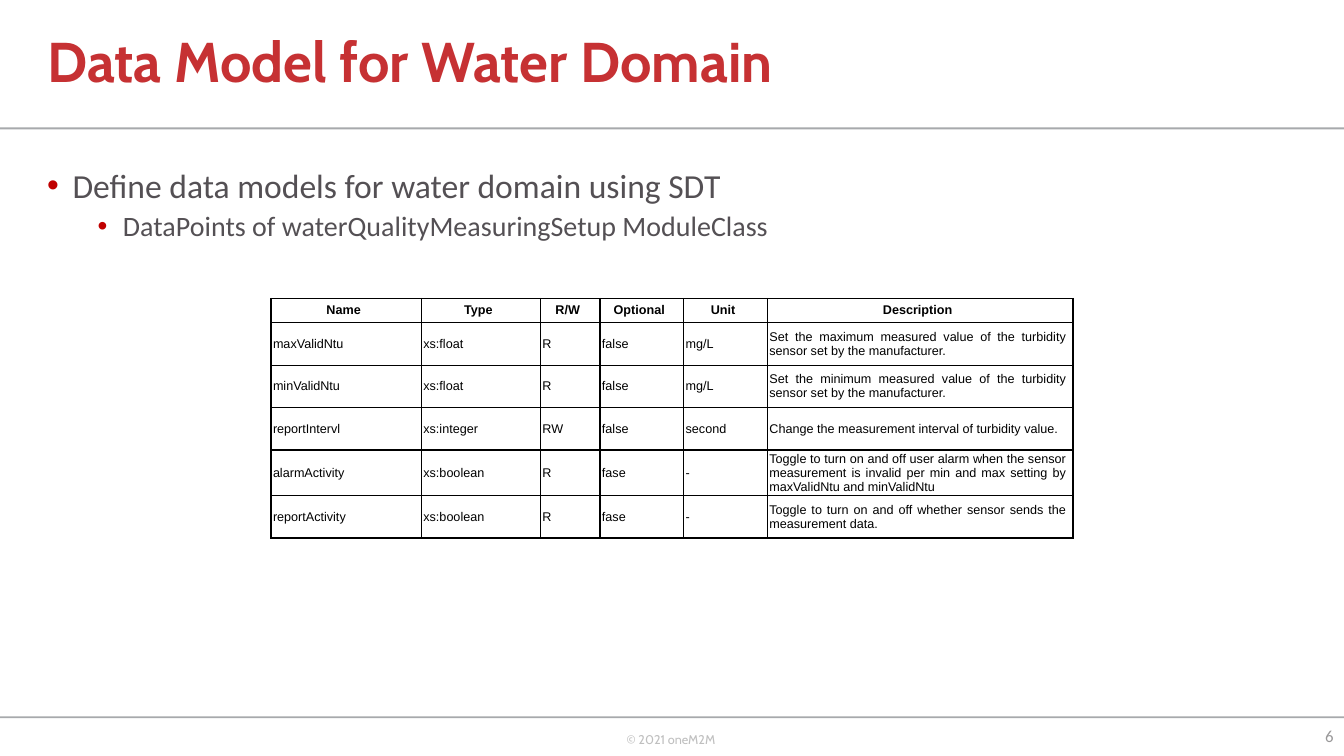
from lxml.etree import SubElement
from pptx import Presentation
from pptx.dml.color import RGBColor
from pptx.enum.shapes import MSO_SHAPE
from pptx.enum.text import MSO_ANCHOR, MSO_AUTO_SIZE, PP_ALIGN
from pptx.oxml.ns import qn
from pptx.util import Cm, Pt

HEADERS = ["Name", "Type", "R/W", "Optional", "Unit", "Description"]
DATA_POINTS = [
    ["maxValidNtu", "xs:float", "R", "false", "mg/L",
     "Set the maximum measured value of the turbidity sensor set by the manufacturer."],
    ["minValidNtu", "xs:float", "R", "false", "mg/L",
     "Set the minimum measured value of the turbidity sensor set by the manufacturer."],
    ["reportIntervl", "xs:integer", "RW", "false", "second",
     "Change the measurement interval of turbidity value."],
    ["alarmActivity", "xs:boolean", "R", "fase", "-",
     "Toggle to turn on and off user alarm when the sensor measurement is invalid "
     "per min and max setting by maxValidNtu and minValidNtu"],
    ["reportActivity", "xs:boolean", "R", "fase", "-",
     "Toggle to turn on and off whether sensor sends the measurement data."],
]
COLUMN_WIDTHS = [3.79, 3, 1.5, 2.11, 2.11, 7.7]
HEADER_HEIGHT, ROW_HEIGHT = 0.61, 1.07
SLIDE_WIDTH, SLIDE_HEIGHT = 33.87, 19.05


def color(value):
    return RGBColor.from_string(value)


def apply(target, values):
    for name, value in values.items():
        setattr(target, name, value)


class SlideBuilder:
    title_style = {"name": "Cabin", "size": Pt(40), "bold": True}
    footer_style = {"name": "Cabin", "size": Pt(9)}
    number_style = {"name": "Calibri", "size": Pt(12)}
    table_style = {"name": "Arial", "size": Pt(9)}
    cell_format = {"margin_left": Cm(0.05), "margin_right": Cm(0.18), "margin_top": 0,
                   "margin_bottom": 0, "vertical_anchor": MSO_ANCHOR.MIDDLE}

    def __init__(self, presentation):
        self.slide = presentation.slides.add_slide(presentation.slide_layouts[5])

    def add_text(self, paragraph, text, style, ink, **layout):
        run = paragraph.add_run()
        run.text = text
        apply(run.font, style)
        run.font.color.rgb = color(ink)
        apply(paragraph, layout)

    def title(self, text, left, top, width, height):
        shape = self.slide.shapes.title
        apply(shape, {"left": Cm(left), "top": Cm(top), "width": Cm(width), "height": Cm(height)})
        apply(shape.text_frame, {"vertical_anchor": MSO_ANCHOR.MIDDLE, "word_wrap": True,
                                 "auto_size": MSO_AUTO_SIZE.NONE})
        self.add_text(shape.text_frame.paragraphs[0], text, self.title_style, "C63133",
                      alignment=PP_ALIGN.LEFT, line_spacing=0.9)

    def rule(self, top):
        shape = self.slide.shapes.add_shape(
            MSO_SHAPE.RECTANGLE, 0, Cm(top), Cm(SLIDE_WIDTH), Cm(0.05))
        shape.shadow.inherit = False
        shape.fill.solid()
        shape.fill.fore_color.rgb = color("A7A9AC")
        shape.line.fill.background()

    def frame(self, left, top, width, height, **values):
        shape = self.slide.shapes.add_textbox(Cm(left), Cm(top), Cm(width), Cm(height))
        apply(shape.text_frame, {"word_wrap": True, **values})
        return shape.text_frame

    def label(self, text, box, style, ink, alignment, **values):
        frame = self.frame(*box, **values)
        self.add_text(frame.paragraphs[0], text, style, ink, alignment=alignment)

    def bullets(self, items, box):
        frame = self.frame(*box)
        for level, (text, size, indent) in enumerate(items):
            paragraph = frame.add_paragraph() if level else frame.paragraphs[0]
            properties = paragraph._p.get_or_add_pPr()
            properties.set("marL", str(Cm(indent)))
            properties.set("indent", str(-Cm(0.64)))
            bullet_color = SubElement(properties, qn("a:buClr"))
            SubElement(bullet_color, qn("a:srgbClr"), val="C00000")
            SubElement(properties, qn("a:buFont"), typeface="Arial")
            SubElement(properties, qn("a:buChar"), char="•")
            self.add_text(paragraph, text, {"name": "Calibri", "size": Pt(size)}, "545054",
                          level=level, line_spacing=0.9, space_before=Pt(5 * level))

    def borders(self, cell):
        properties = cell._tc.get_or_add_tcPr()
        for side in ("a:lnL", "a:lnR", "a:lnT", "a:lnB"):
            line = SubElement(properties, qn(side), w=str(Pt(1)))
            fill = SubElement(line, qn("a:solidFill"))
            SubElement(fill, qn("a:srgbClr"), val="000000")

    def cell(self, cell, text, bold, **layout):
        apply(cell, self.cell_format)
        self.borders(cell)
        cell.fill.solid()
        cell.fill.fore_color.rgb = color("FFFFFF")
        self.add_text(cell.text_frame.paragraphs[0], text,
                      {**self.table_style, "bold": bold}, "000000", **layout)

    def table(self, headers, rows, left, top):
        heights = [HEADER_HEIGHT] + [ROW_HEIGHT] * len(rows)
        table = self.slide.shapes.add_table(
            len(heights), len(headers), Cm(left), Cm(top),
            Cm(sum(COLUMN_WIDTHS)), Cm(sum(heights))).table
        apply(table, {"first_row": False, "horz_banding": False})
        for column, width in zip(table.columns, COLUMN_WIDTHS):
            column.width = Cm(width)
        for row, height in zip(table.rows, heights):
            row.height = Cm(height)
        for index, header in enumerate(headers):
            self.cell(table.cell(0, index), header, True, alignment=PP_ALIGN.CENTER)
            alignment = PP_ALIGN.LEFT if header == "Unit" else PP_ALIGN.JUSTIFY
            space = Pt(0) if header in ("Unit", "Description") else Pt(9)
            for number, values in enumerate(rows, 1):
                self.cell(table.cell(number, index), values[index], False,
                          alignment=alignment, space_after=space)


def main():
    presentation = Presentation()
    apply(presentation, {"slide_width": Cm(SLIDE_WIDTH), "slide_height": Cm(SLIDE_HEIGHT)})
    builder = SlideBuilder(presentation)
    for top in (3.21, 18.05):
        builder.rule(top)
    builder.label("© 2021 oneM2M", (15.54, 18.31, 2.79, 1.02), builder.footer_style, "BFBFBF",
                  PP_ALIGN.LEFT, word_wrap=False, auto_size=MSO_AUTO_SIZE.SHAPE_TO_FIT_TEXT)
    builder.title("Data Model for Water Domain", 0.94, 0, 25.58, 3.25)
    builder.label("6", (32.49, 18.03, 1.37, 1.02), builder.number_style, "999899",
                  PP_ALIGN.RIGHT, vertical_anchor=MSO_ANCHOR.MIDDLE)
    builder.bullets([("Define data models for water domain using SDT", 24, 0.64),
                     ("DataPoints of waterQualityMeasuringSetup ModuleClass", 20, 1.91)],
                    (0.94, 4.14, 30.63, 1.83))
    builder.table(HEADERS, DATA_POINTS, 6.83, 7.52)
    presentation.save("out.pptx")


if __name__ == "__main__":
    main()
